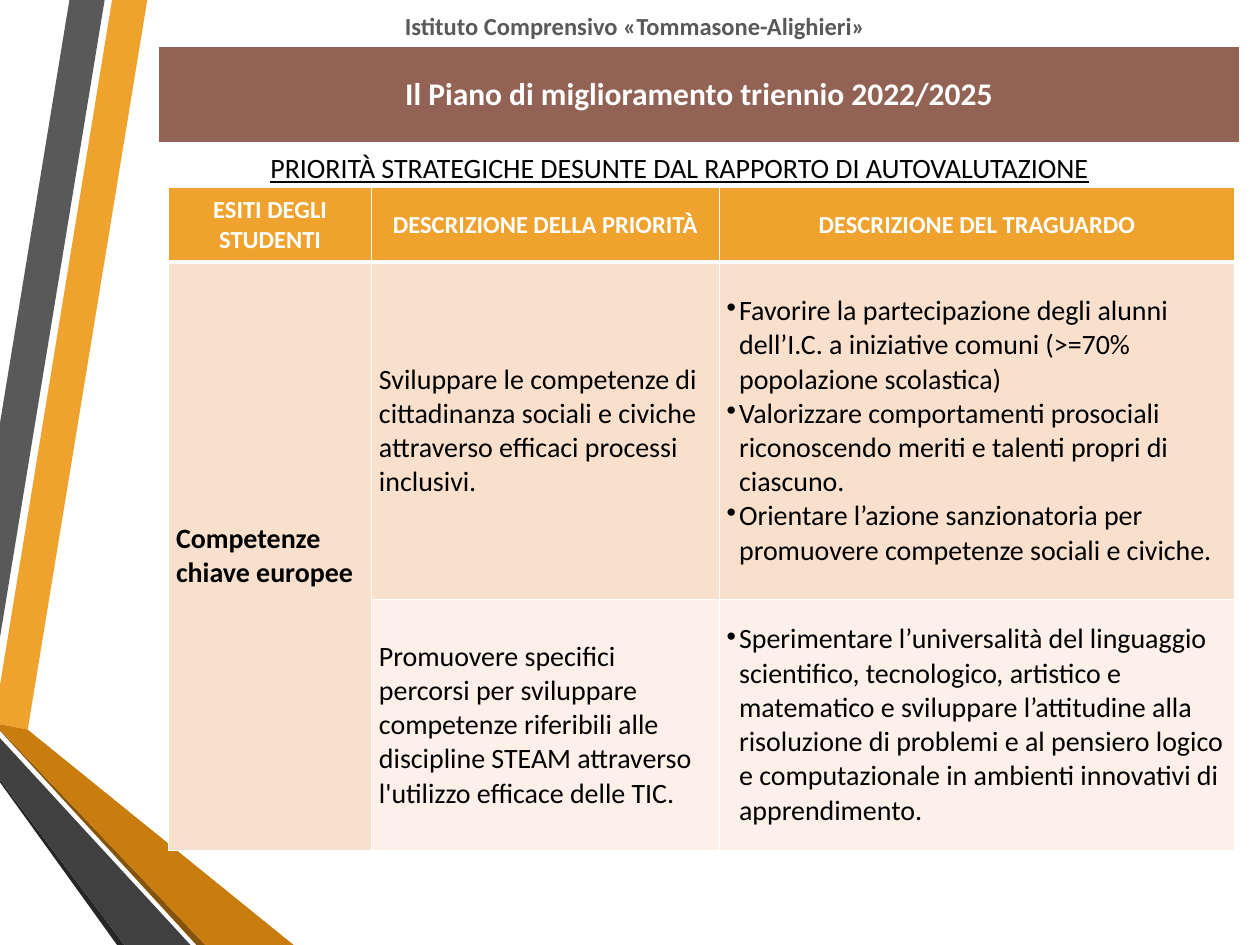
import pptx
import pptx.dml.color
import pptx.enum.text
import pptx.oxml
import pptx.oxml.ns
import pptx.util

Cm = pptx.util.Cm
Pt = pptx.util.Pt
ALIGN = pptx.enum.text.PP_ALIGN
ANCHOR = pptx.enum.text.MSO_ANCHOR
NAMESPACE = pptx.oxml.ns.nsdecls("a")


def rgb(color):
    return pptx.dml.color.RGBColor.from_string(color)


def write(frame, lines, size, color, bold=False, align=ALIGN.LEFT, bulleted=False):
    """Fill a text frame with one paragraph per line, all in the same format."""
    frame.word_wrap = True
    frame.text = "\n".join(lines)
    for paragraph in frame.paragraphs:
        paragraph.alignment = align
        if bulleted:
            properties = paragraph._p.get_or_add_pPr()
            properties.set("marL", str(Cm(0.25)))
            properties.set("indent", str(-Cm(0.25)))
            properties.append(pptx.oxml.parse_xml(f'<a:buChar {NAMESPACE} char="•"/>'))
        for run in paragraph.runs:
            run.font.name = "Calibri"
            run.font.size = Pt(size)
            run.font.bold = bold
            run.font.color.rgb = rgb(color)


presentation = pptx.Presentation()
presentation.slide_width = Cm(25.4)
presentation.slide_height = Cm(19.05)
slide = presentation.slides.add_slide(presentation.slide_layouts[6])

# Decorative ribbons, with points in hundredths of a centimetre
ribbons = [
    ("F0A22E", [(0, 1382), (0, 1460), (56, 1471), (297, 0), (226, 0)]),
    ("595959", [(211, 0), (140, 0), (0, 853), (0, 1285)]),
    ("262626", [(0, 1572), (0, 1577), (236, 1905), (251, 1905)]),
    ("85540A", [(0, 1471), (0, 1473), (396, 1905), (414, 1905)]),
    ("C87D0E", [(0, 1471), (414, 1905), (592, 1905), (56, 1471), (0, 1460)]),
    ("404040", [(0, 1572), (251, 1905), (384, 1905), (0, 1488)]),
]
for color, points in ribbons:
    builder = slide.shapes.build_freeform(*points[0], scale=Cm(0.01))
    builder.add_line_segments(points[1:], close=True)
    ribbon = builder.convert_to_shape()
    ribbon.shadow.inherit = False
    ribbon.fill.solid()
    ribbon.fill.fore_color.rgb = rgb(color)
    ribbon.line.fill.background()

# Priorities table
column_widths = [4.09, 7.01, 10.39]
row_heights = [1.5, 6.81, 5.05]
row_fills = ["F0A22E", "F9E0CD", "FCF0E8"]
contents = [
    [["ESITI DEGLI STUDENTI"], ["DESCRIZIONE DELLA PRIORITÀ"], ["DESCRIZIONE DEL TRAGUARDO"]],
    [
        ["Competenze chiave europee"],
        ["Sviluppare le competenze di cittadinanza sociali e civiche attraverso "
         "efficaci processi inclusivi."],
        ["Favorire la partecipazione degli alunni dell’I.C. a iniziative comuni "
         "(>=70% popolazione scolastica)",
         "Valorizzare comportamenti prosociali riconoscendo meriti e talenti "
         "propri di ciascuno.",
         "Orientare l’azione sanzionatoria per promuovere competenze sociali e civiche."],
    ],
    [
        [],
        ["Promuovere specifici percorsi per sviluppare competenze riferibili alle "
         "discipline STEAM attraverso l'utilizzo efficace delle TIC."],
        ["Sperimentare l’universalità del linguaggio scientifico, tecnologico, "
         "artistico e matematico e sviluppare l’attitudine alla risoluzione di "
         "problemi e al pensiero logico e computazionale in ambienti innovativi "
         "di apprendimento."],
    ],
]
priorities = slide.shapes.add_table(
    3, 3, Cm(3.4), Cm(3.78), Cm(sum(column_widths)), Cm(sum(row_heights))
).table
priorities.horz_banding = False
for column, width in zip(priorities.columns, column_widths):
    column.width = Cm(width)
for row, height in zip(priorities.rows, row_heights):
    row.height = Cm(height)
priorities.cell(1, 0).merge(priorities.cell(2, 0))

for row_index, row_contents in enumerate(contents):
    for column_index, lines in enumerate(row_contents):
        cell = priorities.cell(row_index, column_index)
        cell.fill.solid()
        cell.fill.fore_color.rgb = rgb(row_fills[row_index])
        cell.vertical_anchor = ANCHOR.MIDDLE
        if row_index == 0:
            write(cell.text_frame, lines, 14, "FFFFFF", bold=True, align=ALIGN.CENTER)
        else:
            cell.margin_left = cell.margin_right = Cm(0.15)
            cell.margin_top = cell.margin_bottom = Cm(0.1 if column_index == 2 else 0.13)
            write(cell.text_frame, lines, 16, "000000", bold=column_index == 0,
                  bulleted=column_index == 2)
        cell_properties = cell._tc.get_or_add_tcPr()
        for position, side in enumerate("LRTB"):
            thick = (row_index, side) in [(0, "B"), (1, "T")]
            border = pptx.oxml.parse_xml(
                f'<a:ln{side} {NAMESPACE} w="{Pt(3 if thick else 1)}"><a:solidFill>'
                f'<a:srgbClr val="FFFFFF"/></a:solidFill></a:ln{side}>'
            )
            cell_properties.insert(position, border)

# School name and subtitle
school = slide.shapes.add_textbox(Cm(2.9), Cm(0.1), Cm(19.81), Cm(0.86))
write(school.text_frame, ["Istituto Comprensivo «Tommasone-Alighieri»"], 14, "595959",
      bold=True, align=ALIGN.CENTER)

subtitle = slide.shapes.add_textbox(Cm(3.3), Cm(2.92), Cm(20.8), Cm(0.94))
write(subtitle.text_frame, ["PRIORITÀ STRATEGICHE DESUNTE DAL RAPPORTO DI AUTOVALUTAZIONE"],
      16, "000000", align=ALIGN.CENTER)
subtitle.text_frame.paragraphs[0].runs[0].font.underline = True

# Title band
title_table = slide.shapes.add_table(1, 1, Cm(3.2), Cm(0.94), Cm(21.79), Cm(1.93)).table
title_table.first_row = False
title_table.horz_banding = False
title_cell = title_table.cell(0, 0)
title_cell.fill.solid()
title_cell.fill.fore_color.rgb = rgb("926255")
title_cell.vertical_anchor = ANCHOR.MIDDLE
write(title_cell.text_frame, ["Il Piano di miglioramento triennio 2022/2025"], 18, "FFFFFF",
      bold=True, align=ALIGN.CENTER)

presentation.save("out.pptx")
